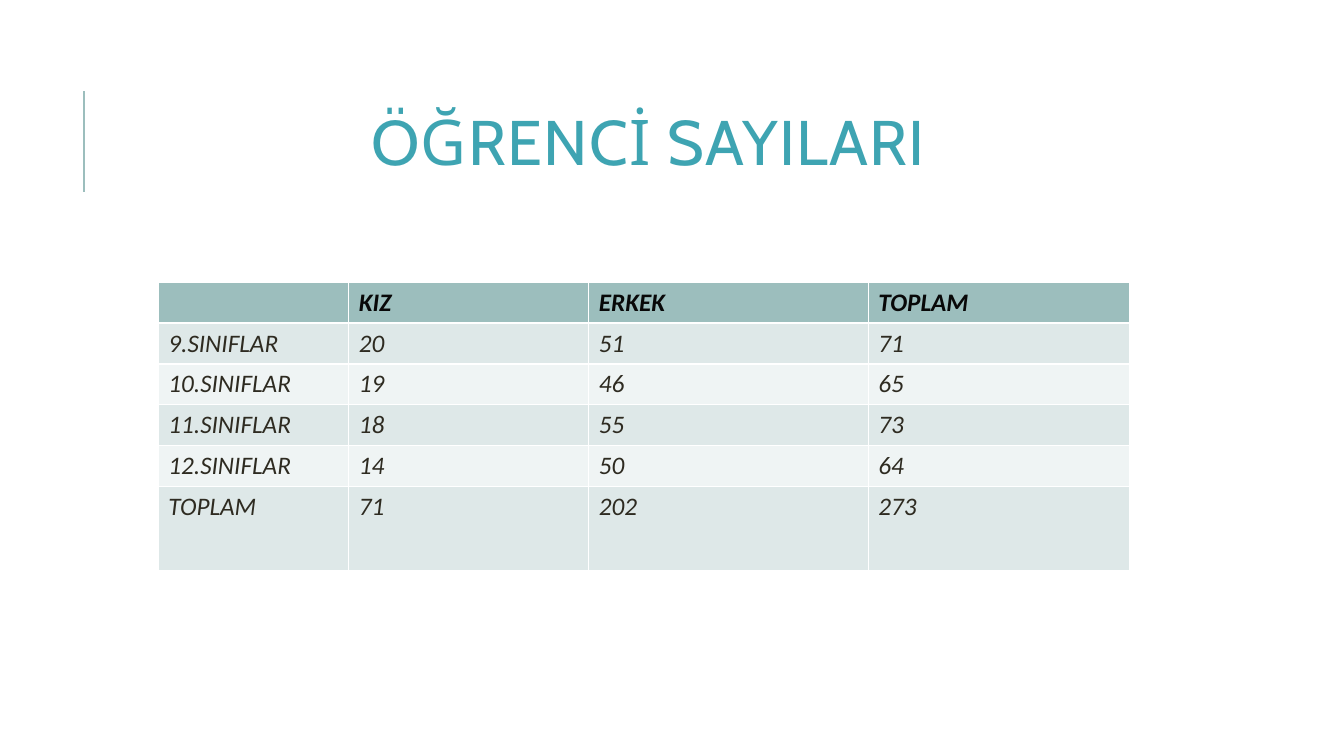
from lxml.etree import SubElement
from pptx import Presentation
from pptx.dml.color import RGBColor
from pptx.enum.shapes import MSO_CONNECTOR
from pptx.enum.text import MSO_ANCHOR, MSO_AUTO_SIZE, PP_ALIGN
from pptx.oxml.ns import qn
from pptx.util import Cm, Pt

TEAL = RGBColor(0x3E, 0xA4, 0xB2)
SAGE = RGBColor(0x9C, 0xBE, 0xBD)
BAND_DARK = RGBColor(0xDE, 0xE8, 0xE8)
BAND_LIGHT = RGBColor(0xEF, 0xF4, 0xF4)
HEADER_TEXT = RGBColor(0x08, 0x08, 0x08)
BODY_TEXT = RGBColor(0x2E, 0x2B, 0x21)

STUDENT_COUNTS = [
    ("", "KIZ", "ERKEK", "TOPLAM"),
    ("9.SINIFLAR", "20", "51", "71"),
    ("10.SINIFLAR", "19", "46", "65"),
    ("11.SINIFLAR", "18", "55", "73"),
    ("12.SINIFLAR", "14", "50", "64"),
    ("TOPLAM", "71", "202", "273"),
]
COLUMN_WIDTHS = [Cm(4.8), Cm(6.05), Cm(7.04), Cm(6.58)]
ROW_HEIGHTS = [Cm(1.03)] * 5 + [Cm(2.13)]


def style_font(font, name, size, color, bold=False, italic=False):
    """Set the typeface, size, colour and style of a font."""
    font.name, font.size = name, Pt(size)
    font.bold, font.italic = bold, italic
    font.color.rgb = color


def set_title(slide, text):
    """Place and format the slide title."""
    title = slide.shapes.title
    title.left, title.top = Cm(2.84), Cm(1.63)
    title.width, title.height = Cm(27), Cm(4.17)
    frame = title.text_frame
    frame.text = text
    frame.word_wrap = True
    frame.auto_size = MSO_AUTO_SIZE.NONE
    frame.vertical_anchor = MSO_ANCHOR.MIDDLE
    paragraph = frame.paragraphs[0]
    paragraph.alignment = PP_ALIGN.CENTER
    paragraph.line_spacing = 0.8
    style_font(paragraph.font, "Cabin", 45, TEAL)
    paragraph.runs[0]._r.get_or_add_rPr().set("spc", "100")


def add_accent_line(slide):
    """Draw the vertical line beside the title."""
    line = slide.shapes.add_connector(
        MSO_CONNECTOR.STRAIGHT, Cm(2.12), Cm(4.83), Cm(2.12), Cm(2.29))
    line.line.color.rgb = SAGE
    line.line.width = Pt(1.5)
    SubElement(line._element.spPr, qn("a:effectLst"))


def fill_cell(cell, text, row_index):
    """Write one table cell in the style of its row."""
    is_header = row_index == 0
    band = BAND_DARK if row_index % 2 else BAND_LIGHT
    cell.fill.solid()
    cell.fill.fore_color.rgb = SAGE if is_header else band
    cell.text = text
    style_font(cell.text_frame.paragraphs[0].font, "Calibri", 18,
               HEADER_TEXT if is_header else BODY_TEXT,
               bold=is_header, italic=True)


def add_count_table(slide):
    """Add the table of student counts."""
    table = slide.shapes.add_table(
        len(ROW_HEIGHTS), len(COLUMN_WIDTHS), Cm(3.99), Cm(7.11),
        sum(COLUMN_WIDTHS), sum(ROW_HEIGHTS)).table
    for column, width in zip(table.columns, COLUMN_WIDTHS):
        column.width = width
    for row_index, values in enumerate(STUDENT_COUNTS):
        row = table.rows[row_index]
        row.height = ROW_HEIGHTS[row_index]
        for cell, text in zip(row.cells, values):
            fill_cell(cell, text, row_index)


def main():
    """Build and save the presentation."""
    presentation = Presentation()
    presentation.slide_width, presentation.slide_height = Cm(33.87), Cm(19.05)
    slide = presentation.slides.add_slide(presentation.slide_layouts[5])
    add_accent_line(slide)
    set_title(slide, "ÖĞRENCİ SAYILARI")
    add_count_table(slide)
    presentation.save("out.pptx")


if __name__ == "__main__":
    main()
